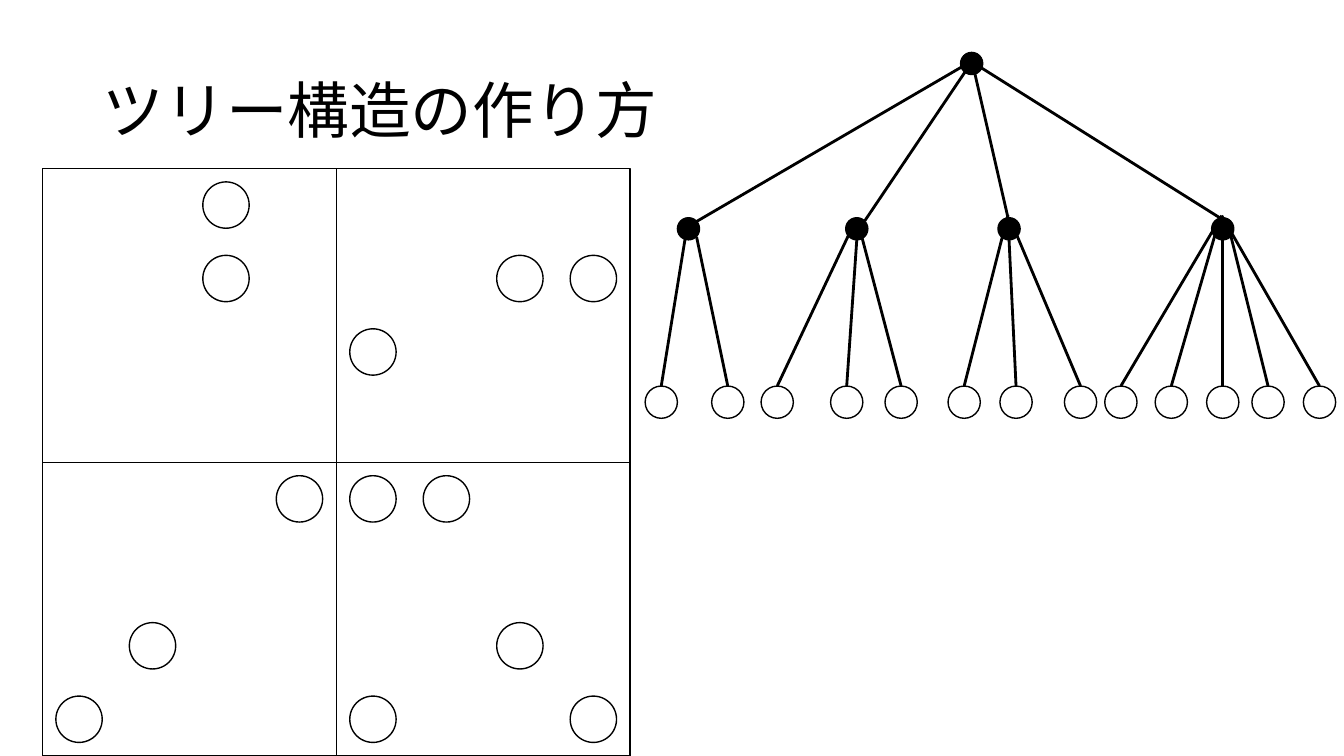
from dataclasses import dataclass

from lxml.etree import SubElement
from pptx import Presentation
from pptx.dml.color import RGBColor
from pptx.enum.shapes import MSO_CONNECTOR, MSO_SHAPE
from pptx.enum.text import MSO_ANCHOR, PP_ALIGN
from pptx.oxml.ns import qn
from pptx.util import Inches, Pt

WIDTH, HEIGHT = Inches(13.33), Inches(7.5)


@dataclass(frozen=True)
class Theme:
    ink: RGBColor = RGBColor(0, 0, 0)
    font: str = "Calibri"
    title_size: float = 44
    divider: float = 0.5
    outline: float = 1
    edge: float = 2


THEME = Theme()


def column(share):
    """Length of a percentage of the slide's width."""
    return round(WIDTH * share / 100)


def row(share):
    """Length of a percentage of the slide's height."""
    return round(HEIGHT * share / 100)


PLANE_LEFT, PLANE_TOP = column(3.15), row(22.27)
PLANE_SIDE = HEIGHT - PLANE_TOP
PLANE_CELLS = 8
PARTICLE, LEAF, NODE = row(6.13), row(4.27), row(2.93)

# Column and row of the cell that holds each particle
PARTICLES = [(2, 0), (2, 1), (6, 1), (7, 1), (4, 2), (3, 4), (4, 4), (5, 4),
             (1, 6), (6, 6), (0, 7), (4, 7), (7, 7)]

# Tree positions are percentages of the slide's width and height
ROOT = (72.3, 8.4)
BRANCH_ROW, LEAF_ROW = 30.27, 53.2


@dataclass(frozen=True)
class Branch:
    center: float
    root_edge: tuple  # start and end points
    leaf_edges: tuple  # start point and column of the leaf


BRANCHES = [
    Branch(51.23, ((72.38, 8), (51.15, 30)),
           (((51.23, 28.8), 49.2), ((51.83, 31.33), 54.15))),
    Branch(63.75, ((72.38, 8), (64.35, 29.2)),
           (((63.75, 28.8), 57.83), ((63.75, 31.73), 63),
            ((63.75, 28.8), 67.05))),
    Branch(75.08, ((72.38, 8.53), (75, 28.8)),
           (((75, 28.4), 71.74), ((75.08, 31.73), 75.6),
            ((75.68, 31.2), 80.4))),
    Branch(90.98, ((72.15, 8), (90.75, 28.8)),
           (((90.9, 28.53), 83.4), ((90.38, 31.2), 87.15),
            ((90.98, 31.6), 90.98), ((91.58, 31.2), 94.35),
            ((90.9, 28.53), 98.18))),
]


def point(position):
    return column(position[0]), row(position[1])


def set_line(shape, width):
    shape.line.color.rgb = THEME.ink
    shape.line.width = Pt(width)


def add_outline(slide, kind, left, top, size, filled=False):
    shape = slide.shapes.add_shape(kind, left, top, size, size)
    shape.shadow.inherit = False
    if filled:
        shape.fill.solid()
        shape.fill.fore_color.rgb = THEME.ink
    else:
        shape.fill.background()
    set_line(shape, THEME.outline)


def add_circle(slide, center, diameter, filled=False):
    left, top = (round(value - diameter / 2) for value in center)
    add_outline(slide, MSO_SHAPE.OVAL, left, top, diameter, filled)


def add_line(slide, start, end, width):
    connector = slide.shapes.add_connector(
        MSO_CONNECTOR.STRAIGHT, *start, *end)
    set_line(connector, width)
    SubElement(connector._element.spPr, qn("a:effectLst"))


def add_title(slide, text):
    title = slide.shapes.title
    title.left, title.top = point((6.9, 5.33))
    title.width, title.height = point((86.25, 19.33))
    frame = title.text_frame
    frame.word_wrap = True
    frame.vertical_anchor = MSO_ANCHOR.MIDDLE
    paragraph = frame.paragraphs[0]
    paragraph.alignment = PP_ALIGN.LEFT
    paragraph.line_spacing = 0.9
    run = paragraph.add_run()
    run.text = text
    run.font.name = THEME.font
    run.font.size = Pt(THEME.title_size)
    run.font.color.rgb = THEME.ink


def add_plane(slide):
    """Square split into quadrants, with the particles inside it."""
    right, bottom = PLANE_LEFT + PLANE_SIDE, PLANE_TOP + PLANE_SIDE
    middle_x = PLANE_LEFT + PLANE_SIDE // 2
    middle_y = PLANE_TOP + PLANE_SIDE // 2
    add_outline(slide, MSO_SHAPE.RECTANGLE, PLANE_LEFT, PLANE_TOP, PLANE_SIDE)
    add_line(slide, (PLANE_LEFT, middle_y), (right, middle_y), THEME.divider)
    add_line(slide, (middle_x, bottom), (middle_x, PLANE_TOP), THEME.divider)
    cell = PLANE_SIDE / PLANE_CELLS
    for across, down in PARTICLES:
        center = (PLANE_LEFT + (across + 0.5) * cell,
                  PLANE_TOP + (down + 0.5) * cell)
        add_circle(slide, center, PARTICLE)


def add_tree(slide):
    """Edges first, so that the nodes cover their ends."""
    leaf_top = row(LEAF_ROW) - LEAF // 2
    for branch in BRANCHES:
        start, end = branch.root_edge
        add_line(slide, point(start), point(end), THEME.edge)
        for start, leaf in branch.leaf_edges:
            add_line(slide, point(start), (column(leaf), leaf_top), THEME.edge)
    for branch in BRANCHES:
        for _, leaf in branch.leaf_edges:
            add_circle(slide, point((leaf, LEAF_ROW)), LEAF)
        add_circle(slide, point((branch.center, BRANCH_ROW)), NODE, True)
    add_circle(slide, point(ROOT), NODE, True)


def main():
    presentation = Presentation()
    presentation.slide_width, presentation.slide_height = WIDTH, HEIGHT
    slide = presentation.slides.add_slide(presentation.slide_layouts[5])
    add_title(slide, "ツリー構造の作り方")
    add_plane(slide)
    add_tree(slide)
    presentation.save("out.pptx")


if __name__ == "__main__":
    main()
